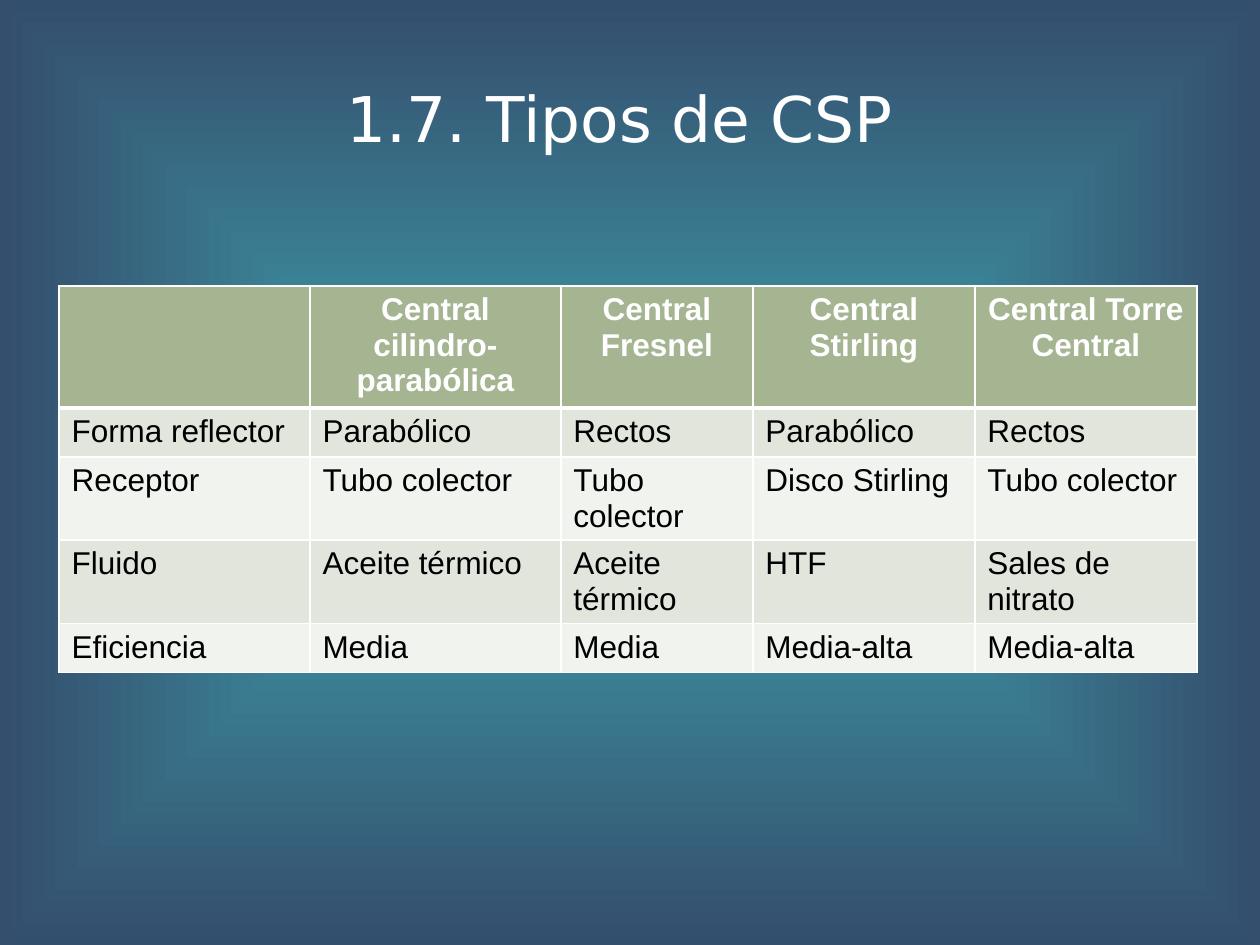
from dataclasses import dataclass

from lxml import etree
from pptx import Presentation, util as u
from pptx.dml.color import RGBColor
from pptx.enum import text
from pptx.oxml import ns

TITLE = "1.7. Tipos de CSP "
HEADER = ["", "Central cilindro-parabólica", "Central Fresnel",
          "Central Stirling", "Central Torre Central"]
ROWS = [
    ["Forma reflector", "Parabólico", "Rectos", "Parabólico", "Rectos"],
    ["Receptor", "Tubo colector", "Tubo colector", "Disco Stirling", "Tubo colector"],
    ["Fluido", "Aceite térmico", "Aceite térmico", "HTF", "Sales de nitrato"],
    ["Eficiencia", "Media", "Media", "Media-alta", "Media-alta"],
]

SLIDE_SIZE = (1260, 945)
TITLE_BOX = (63, 38, 1134, 158)
TABLE_BOX = (59, 286, 1138, 441)
COLUMN_WIDTHS = [251, 251, 192, 222, 222]
HEADER_HEIGHT, ROW_HEIGHT = 122, 49


@dataclass(frozen=True)
class Theme:
    center: str = "3FA4AF"
    edge: str = "344E6D"
    header: str = "A5B592"
    bands: tuple = ("E1E5DC", "F0F3EE")
    light: str = "FFFFFF"
    dark: str = "000000"
    title_font: str = "DejaVu Sans"
    table_font: str = "Arial"
    title_size: int = 36
    table_size: int = 18
    border: int = 1
    header_border: int = 3


THEME = Theme()


def px(length):
    return u.Emu(round(length * 914400 / 126))


def add_run(paragraph, content, font, size, color, bold=False):
    run = paragraph.add_run()
    run.text = content
    run.font.name = font
    run.font.size = u.Pt(size)
    run.font.bold = bold
    run.font.color.rgb = RGBColor.from_string(color)


def paint_background(slide):
    """Fill the background with a gradient that spreads from its centre."""
    fill = slide.background.fill
    fill.gradient()
    for stop, color in zip(fill.gradient_stops, (THEME.center, THEME.edge)):
        stop.color.rgb = RGBColor.from_string(color)
    gradient = slide.element.find(".//" + ns.qn("a:gradFill"))
    gradient.remove(gradient.find(ns.qn("a:lin")))
    shade = etree.SubElement(gradient, ns.qn("a:path"), path="shape")
    etree.SubElement(shade, ns.qn("a:fillToRect"),
                     {side: "50000" for side in "ltrb"})


def add_title(slide):
    title = slide.shapes.title
    title.left, title.top, title.width, title.height = map(px, TITLE_BOX)
    frame = title.text_frame
    frame.vertical_anchor = text.MSO_ANCHOR.MIDDLE
    paragraph = frame.paragraphs[0]
    paragraph.alignment = text.PP_ALIGN.CENTER
    add_run(paragraph, TITLE, THEME.title_font, THEME.title_size, THEME.light)


def set_borders(cell, widths):
    """Draw the cell's sides; widths maps L, R, T and B to points."""
    properties = cell._tc.get_or_add_tcPr()
    for index, (side, width) in enumerate(widths.items()):
        line = etree.Element(ns.qn(f"a:ln{side}"), w=str(u.Pt(width)))
        solid = etree.SubElement(line, ns.qn("a:solidFill"))
        etree.SubElement(solid, ns.qn("a:srgbClr"), val=THEME.light)
        properties.insert(index, line)


def format_cell(cell, content, row):
    is_header = row == 0
    cell.fill.solid()
    cell.fill.fore_color.rgb = RGBColor.from_string(
        THEME.header if is_header else THEME.bands[(row - 1) % 2])
    widths = dict.fromkeys("LRTB", THEME.border)
    if is_header:
        widths["B"] = THEME.header_border
    elif row == 1:
        widths["T"] = THEME.header_border
    set_borders(cell, widths)
    paragraph = cell.text_frame.paragraphs[0]
    if is_header:
        paragraph.alignment = text.PP_ALIGN.CENTER
    if content:
        add_run(paragraph, content, THEME.table_font, THEME.table_size,
                THEME.light if is_header else THEME.dark, is_header)


def add_comparison(slide):
    content = [HEADER] + ROWS
    frame = slide.shapes.add_table(len(content), len(HEADER), *map(px, TABLE_BOX))
    table = frame.table
    for column, width in zip(table.columns, COLUMN_WIDTHS):
        column.width = px(width)
    for row, values in enumerate(content):
        table.rows[row].height = px(ROW_HEIGHT if row else HEADER_HEIGHT)
        for column, value in enumerate(values):
            format_cell(table.cell(row, column), value, row)
    frame.height = px(TABLE_BOX[3])


def main():
    presentation = Presentation()
    presentation.slide_width, presentation.slide_height = map(px, SLIDE_SIZE)
    slide = presentation.slides.add_slide(presentation.slide_layouts[5])
    paint_background(slide)
    add_title(slide)
    add_comparison(slide)
    presentation.save("out.pptx")


if __name__ == "__main__":
    main()
